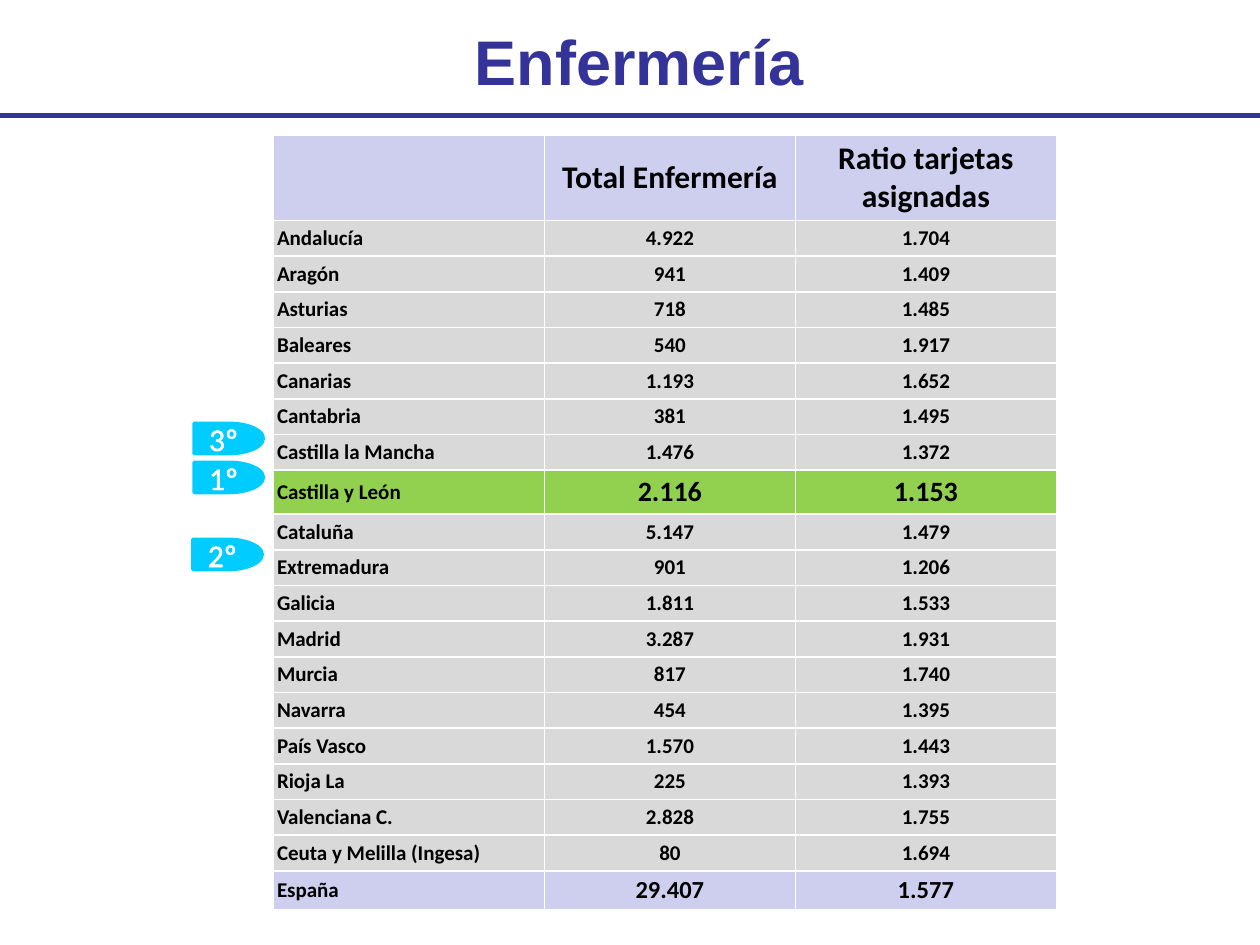
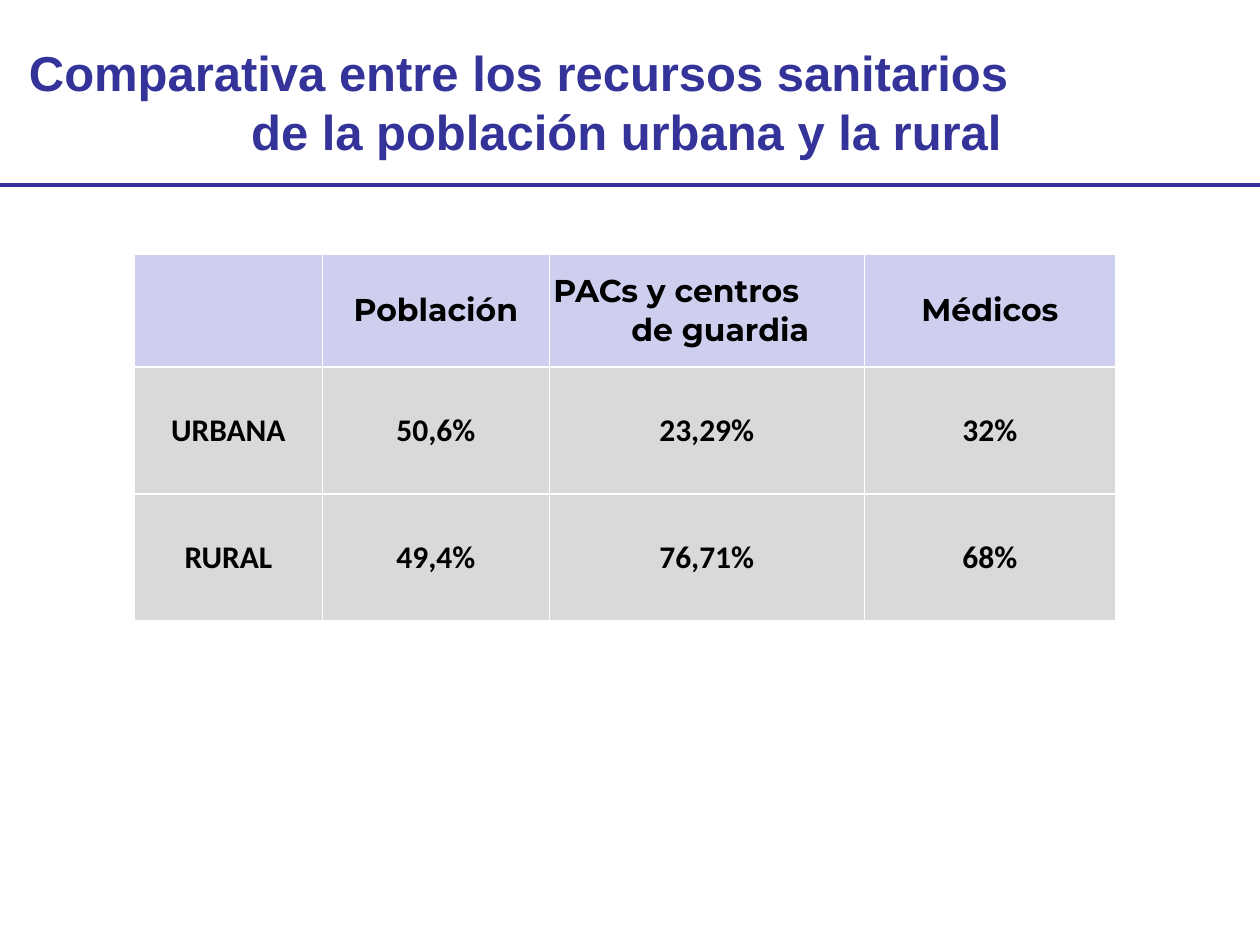
from dataclasses import dataclass

from lxml.etree import SubElement
from pptx import Presentation
from pptx.dml.color import RGBColor
from pptx.enum.shapes import MSO_CONNECTOR, MSO_SHAPE
from pptx.enum.text import MSO_ANCHOR, MSO_AUTO_SIZE, PP_ALIGN
from pptx.oxml import parse_xml
from pptx.oxml.ns import nsdecls, qn
from pptx.util import Pt


@dataclass(frozen=True)
class Theme:
    navy: str = "333399"
    lavender: str = "CECEEF"
    grey: str = "D9D9D9"
    green: str = "92D050"
    cyan: str = "00CCFF"
    white: str = "FFFFFF"
    black: str = "000000"
    title_font: str = "Arial"
    body_font: str = "Calibri"
    accent_font: str = "Montserrat"
    title_size: float = 36
    long_title_size: float = 28
    head_size: float = 18
    highlight_size: float = 16
    total_size: float = 14
    body_size: float = 12
    rule_width: float = 2.5
    badge_line: float = 2
    badge_outline: float = 1.45
    border_width: float = 1
    cell_margin: float = 2.4


class SlideBuilder:
    """Holds the theme and the current slide; one method for each element."""

    def __init__(self, deck, theme):
        self.deck = deck
        self.theme = theme
        self.page = None

    def new_page(self):
        self.page = self.deck.slides.add_slide(self.deck.slide_layouts[6])

    def set_text(self, frame, text, font, size, color, bold=True,
                 align=PP_ALIGN.CENTER, hanging=None):
        """Fill the first paragraph; hanging is (first line, other lines)."""
        para = frame.paragraphs[0]
        para.text = text
        para.alignment = align
        if hanging:
            first, rest = hanging
            para.alignment = PP_ALIGN.LEFT
            properties = para._p.get_or_add_pPr()
            properties.set("marL", str(Pt(rest)))
            properties.set("indent", str(Pt(first - rest)))
        values = {"name": font, "size": Pt(size), "bold": bold}
        for span in para.runs:
            for name, value in values.items():
                setattr(span.font, name, value)
            span.font.color.rgb = RGBColor.from_string(color)
        return para

    def title(self, text, left, top, width, height, size, hanging=None):
        box = self.page.shapes.add_textbox(Pt(left), Pt(top), Pt(width), Pt(height))
        frame = box.text_frame
        frame.word_wrap = True
        frame.auto_size = MSO_AUTO_SIZE.SHAPE_TO_FIT_TEXT
        self.set_text(frame, text, self.theme.title_font, size, self.theme.navy,
                      hanging=hanging)

    def rule(self, top):
        line = self.page.shapes.add_connector(
            MSO_CONNECTOR.STRAIGHT, 0, Pt(top), self.deck.slide_width, Pt(top))
        line.line.color.rgb = RGBColor.from_string(self.theme.navy)
        line.line.width = Pt(self.theme.rule_width)
        SubElement(line._element.spPr, qn("a:effectLst"))

    def badge(self, text, left, top):
        theme = self.theme
        badge = self.page.shapes.add_shape(
            MSO_SHAPE.FLOWCHART_DELAY, Pt(left), Pt(top), Pt(39.6), Pt(17.3))
        badge.shadow.inherit = False
        badge.fill.solid()
        for paint in (badge.fill.fore_color, badge.line.color):
            paint.rgb = RGBColor.from_string(theme.cyan)
        badge.line.width = Pt(theme.badge_line)
        badge.text_frame.vertical_anchor = MSO_ANCHOR.MIDDLE
        para = self.set_text(badge.text_frame, text, theme.body_font,
                             theme.head_size, theme.white, bold=False)
        para.runs[0]._r.get_or_add_rPr().insert(
            0, self.stroke("ln", theme.badge_outline))

    def stroke(self, tag, width):
        return parse_xml(
            f'<a:{tag} {nsdecls("a")} w="{Pt(width)}"><a:solidFill>'
            f'<a:srgbClr val="{self.theme.white}"/></a:solidFill></a:{tag}>')

    def table(self, left, top, widths, heights):
        table = self.page.shapes.add_table(
            len(heights), len(widths), Pt(left), Pt(top),
            Pt(sum(widths)), Pt(sum(heights))).table
        for column, width in zip(table.columns, widths):
            column.width = Pt(width)
        for row, height in zip(table.rows, heights):
            row.height = Pt(height)
        return table

    def cell(self, cell, text, fill, size, font=None, **layout):
        theme = self.theme
        margin = Pt(theme.cell_margin)
        values = {"margin_left": margin, "margin_right": margin,
                  "margin_top": margin, "margin_bottom": margin,
                  "vertical_anchor": MSO_ANCHOR.MIDDLE}
        for name, value in values.items():
            setattr(cell, name, value)
        cell.fill.solid()
        cell.fill.fore_color.rgb = RGBColor.from_string(fill)
        for index, side in enumerate(("lnL", "lnR", "lnT", "lnB")):
            cell._tc.tcPr.insert(index, self.stroke(side, theme.border_width))
        if text:
            self.set_text(cell.text_frame, text, font or theme.body_font,
                          size, theme.black, **layout)


NURSING_HEADS = ("", "Total Enfermería", "Ratio tarjetas asignadas")
NURSING = (
    ("Andalucía", "4.922", "1.704"),
    ("Aragón", "941", "1.409"),
    ("Asturias", "718", "1.485"),
    ("Baleares", "540", "1.917"),
    ("Canarias", "1.193", "1.652"),
    ("Cantabria", "381", "1.495"),
    ("Castilla la Mancha", "1.476", "1.372"),
    ("Castilla y León", "2.116", "1.153"),
    ("Cataluña", "5.147", "1.479"),
    ("Extremadura", "901", "1.206"),
    ("Galicia", "1.811", "1.533"),
    ("Madrid", "3.287", "1.931"),
    ("Murcia", "817", "1.740"),
    ("Navarra", "454", "1.395"),
    ("País Vasco", "1.570", "1.443"),
    ("Rioja La", "225", "1.393"),
    ("Valenciana C.", "2.828", "1.755"),
    ("Ceuta y Melilla (Ingesa)", "80", "1.694"),
    ("España", "29.407", "1.577"),
)
BADGES = (("1º", 110.9, 264.2), ("2º", 110.2, 308.2), ("3º", 110.9, 241.9))

RESOURCE_HEADS = ("", "Población", "PACs y centros\vde guardia", "Médicos")
RESOURCES = (
    ("URBANA", "50,6%", "23,29%", "32%"),
    ("RURAL", "49,4%", "76,71%", "68%"),
)


def nursing_page(builder):
    theme = builder.theme
    builder.new_page()
    builder.title("Enfermería", 121.7, 9.4, 487.4, 51.1, theme.title_size)
    builder.rule(66)
    for badge in BADGES:
        builder.badge(*badge)

    # Fill, figure size and row height of the rows that stand out
    plain = (theme.grey, theme.body_size, 20.4)
    special = {"Castilla y León": (theme.green, theme.highlight_size, 25.2),
               "España": (theme.lavender, theme.total_size, 22.3)}
    styles = [special.get(row[0], plain) for row in NURSING]
    table = builder.table(155.9, 77.2, (155.2, 143.4, 149.2),
                          [48.8] + [height for _, _, height in styles])
    for column, head in enumerate(NURSING_HEADS):
        builder.cell(table.cell(0, column), head, theme.lavender, theme.head_size)
    for index, (row, (fill, size, _)) in enumerate(zip(NURSING, styles), 1):
        region, *figures = row
        builder.cell(table.cell(index, 0), region, fill, theme.body_size,
                     align=PP_ALIGN.LEFT)
        for column, figure in enumerate(figures, 1):
            builder.cell(table.cell(index, column), figure, fill, size)


def resources_page(builder):
    theme = builder.theme
    builder.new_page()
    builder.rule(105.8)

    # Comparison table
    table = builder.table(76.7, 145.4, (107.6, 129.6, 180, 143.6), (64.4, 72.6, 72.6))
    for column, head in enumerate(RESOURCE_HEADS):
        hanging = (0, 44.5) if "\v" in head else None
        builder.cell(table.cell(0, column), head, theme.lavender,
                     theme.head_size, theme.accent_font, hanging=hanging)
    for index, row in enumerate(RESOURCES, 1):
        for column, value in enumerate(row):
            builder.cell(table.cell(index, column), value, theme.grey,
                         theme.head_size)

    builder.title("Comparativa entre los recursos sanitarios\v"
                  "de la población urbana y la rural",
                  0, 20.9, 720, 74.9, theme.long_title_size, hanging=(9.5, 136.5))


def main():
    deck = Presentation()
    deck.slide_width, deck.slide_height = Pt(720), Pt(540)
    builder = SlideBuilder(deck, Theme())
    nursing_page(builder)
    resources_page(builder)
    deck.save("out.pptx")


if __name__ == "__main__":
    main()
